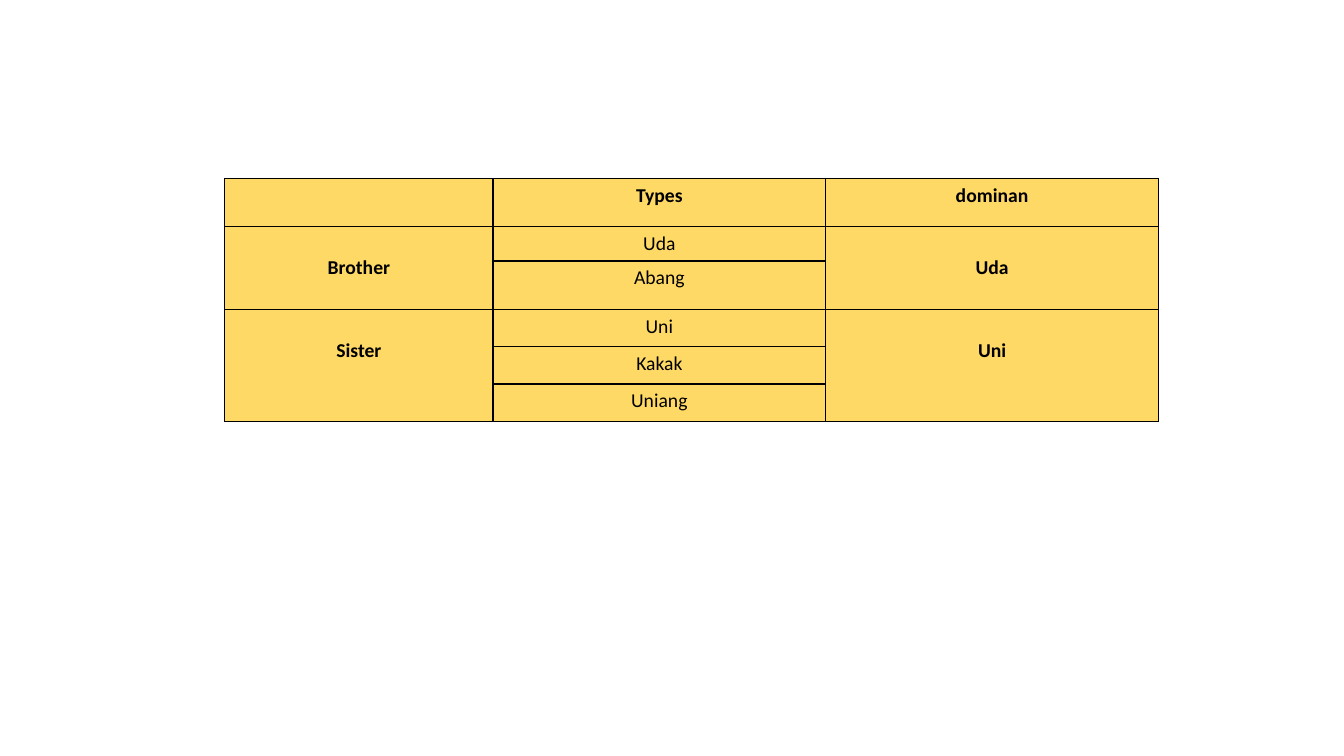
from lxml import etree
from pptx import Presentation
from pptx.dml.color import RGBColor
from pptx.enum.text import MSO_ANCHOR, PP_ALIGN
from pptx.oxml.ns import qn
from pptx.util import Inches, Pt

CENTER, TOP = PP_ALIGN.CENTER, MSO_ANCHOR.TOP
FILL, INK = "FFD966", "000000"

# Content: header, then groups of (label, types, dominant type)
HEADER = ["", "Types", "dominan"]
GROUPS = [
    ("Brother", ["Uda", "Abang"], "Uda"),
    ("Sister", ["Uni", "Kakak", "Uniang"], "Uni"),
]
WIDTHS = [2.66, 3.3, 3.3]
HEIGHTS = [0.48, 0.34, 0.48, 0.37, 0.37, 0.37]
LEFT, UPPER = 2.23, 1.77
PAD, DROP = 0.05, 0.29  # top margins: plain cells, merged cells


def color(code):
    return RGBColor.from_string(code)


def border(cell):
    props = cell._tc.get_or_add_tcPr()
    for spot, side in enumerate(("lnL", "lnR", "lnT", "lnB")):
        line = etree.Element(qn("a:" + side), w=str(Pt(1)))
        fill = etree.SubElement(line, qn("a:solidFill"))
        etree.SubElement(fill, qn("a:srgbClr"), val=INK)
        props.insert(spot, line)


def write(cell, text, bold, top=PAD):
    cell.margin_top = Inches(top)
    cell.text = text
    para = cell.text_frame.paragraphs[0]
    para.alignment = CENTER
    font = para.font
    font.name, font.size, font.bold = "Calibri", Pt(14), bold
    font.color.rgb = color(INK)


deck = Presentation()
deck.slide_width, deck.slide_height = Inches(13.33), Inches(7.5)
slide = deck.slides.add_slide(deck.slide_layouts[6])

# Table grid
frame = slide.shapes.add_table(
    len(HEIGHTS), len(WIDTHS), Inches(LEFT), Inches(UPPER),
    Inches(sum(WIDTHS)), Inches(sum(HEIGHTS)))
table = frame.table
for col, width in zip(table.columns, WIDTHS):
    col.width = Inches(width)
for row, height in zip(table.rows, HEIGHTS):
    row.height = Inches(height)
for cell in table.iter_cells():
    cell.fill.solid()
    cell.fill.fore_color.rgb = color(FILL)
    cell.vertical_anchor = TOP
    border(cell)

# Header row
for col, text in enumerate(HEADER):
    write(table.cell(0, col), text, True)

# Groups, with label and dominant type merged over their rows
start = 1
for label, types, main in GROUPS:
    last = start + len(types) - 1
    for col, text in ((0, label), (2, main)):
        table.cell(start, col).merge(table.cell(last, col))
        write(table.cell(start, col), text, True, DROP)
    for row, text in enumerate(types, start):
        write(table.cell(row, 1), text, False)
    start = last + 1

deck.save("out.pptx")
